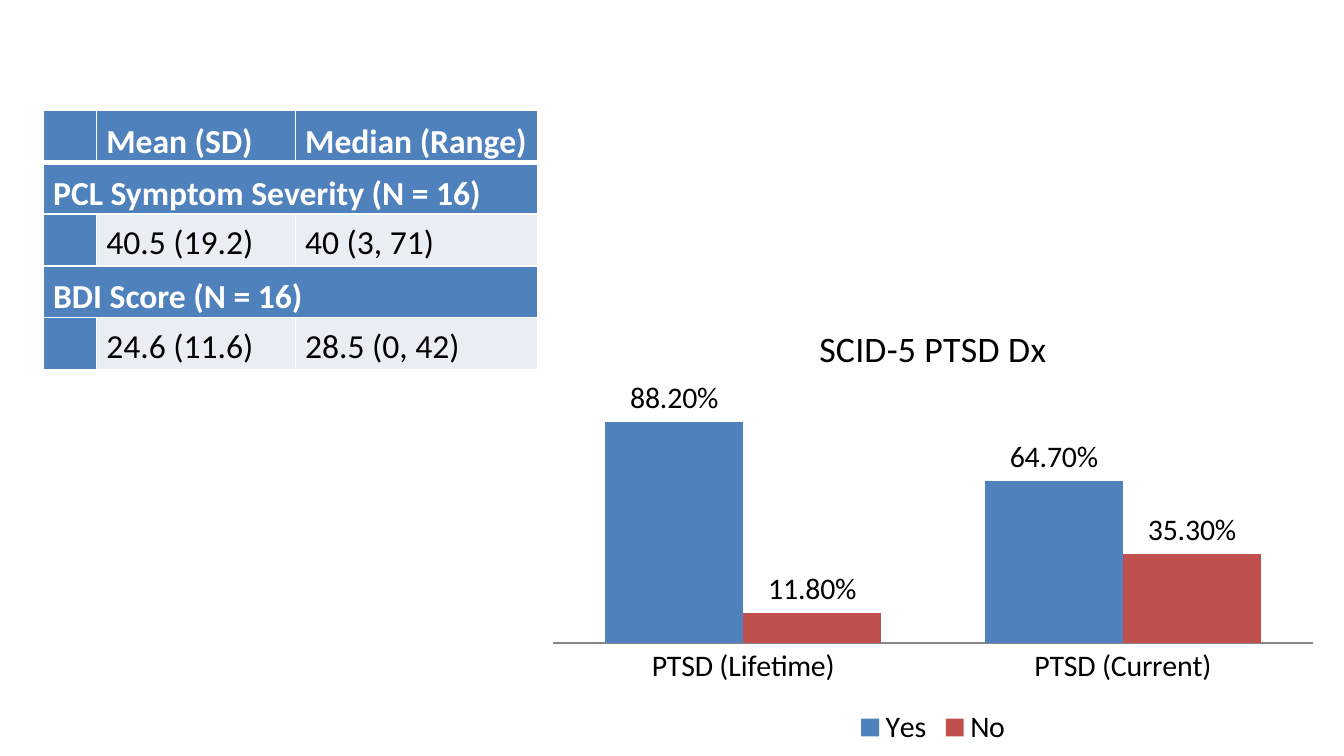
from lxml import etree
from pptx import Presentation
from pptx import util as u
from pptx.chart import data
from pptx.dml import color
from pptx.enum import chart as charts, text
from pptx.oxml import ns

SCALE = 9525
BLUE, RED, PALE = "4F81BD", "C0504D", "E9EDF4"
WHITE, BLACK, GREY = "FFFFFF", "000000", "868686"


def px(length):
    return u.Emu(length * SCALE)


def rgb(value):
    return color.RGBColor.from_string(value)


def style_font(font, size, shade, bold=False):
    font.name, font.size, font.bold = "Calibri", u.Pt(size), bold
    font.color.rgb = rgb(shade)


def write(frame, words, size=18, shade=BLACK, bold=False, spacing=None):
    paragraph = frame.paragraphs[0]
    paragraph.line_spacing = spacing
    run = paragraph.add_run()
    run.text = words
    style_font(run.font, size, shade, bold)


def fill(target, shade):
    target.fill.solid()
    target.fill.fore_color.rgb = rgb(shade)


def draw_borders(cell, widths):
    properties = cell._tc.get_or_add_tcPr()
    for side in "LRTB":
        line = etree.SubElement(properties, ns.qn(f"a:ln{side}"), w=str(u.Pt(widths.get(side, 1))))
        solid = etree.SubElement(line, ns.qn("a:solidFill"))
        etree.SubElement(solid, ns.qn("a:srgbClr"), val=WHITE)


class ClinicalSlide:
    """Holds the style and the current slide, and adds tables and charts to it."""

    def __init__(self, presentation):
        self.slide = presentation.slides.add_slide(presentation.slide_layouts[6])
        self.label_size = 16
        self.heading_rule = 3

    def add_table(self, left, top, widths, row_height, rows):
        shape = self.slide.shapes.add_table(
            len(rows), len(widths), px(left), px(top), px(sum(widths)), px(row_height * len(rows)))
        table = shape.table
        for column, width in zip(table.columns, widths):
            column.width = px(width)
        for index, values in enumerate(rows):
            table.rows[index].height = px(row_height)
            section = len(values) == 1
            if section:
                table.cell(index, 0).merge(table.cell(index, len(widths) - 1))
            rules = {0: {"B": self.heading_rule}, 1: {"T": self.heading_rule}}.get(index, {})
            for position, words in enumerate(values):
                heading = index == 0 or section
                self.fill_cell(table.cell(index, position), words, heading, position == 0, rules)

    def fill_cell(self, cell, words, heading, first, rules):
        cell.margin_left = cell.margin_right = px(7)
        cell.margin_top = cell.margin_bottom = 0
        cell.vertical_anchor = text.MSO_ANCHOR.BOTTOM if heading else text.MSO_ANCHOR.MIDDLE
        draw_borders(cell, rules)
        fill(cell, BLUE if heading or first else PALE)
        if words:
            write(cell.text_frame, words, shade=WHITE if heading else BLACK, bold=heading, spacing=1.15)

    def add_column_chart(self, left, top, width, height, title, categories, series):
        chart_data = data.CategoryChartData(number_format="0.00%")
        chart_data.categories = categories
        for name, values, _ in series:
            chart_data.add_series(name, values)
        chart = self.slide.shapes.add_chart(
            charts.XL_CHART_TYPE.COLUMN_CLUSTERED, px(left), px(top), px(width), px(height), chart_data).chart
        style_font(chart.font, self.label_size, BLACK)
        chart.chart_title.text_frame.text = title
        for overlay in chart.element.xpath("c:chart/c:title/c:overlay"):
            overlay.set("val", "1")
        chart.has_legend = True
        chart.legend.position = charts.XL_LEGEND_POSITION.BOTTOM
        chart.legend.include_in_layout = False
        self.style_axes(chart)
        plot = chart.plots[0]
        plot.gap_width, plot.overlap, plot.vary_by_categories = 75, 0, False
        for bars, (_, _, shade) in zip(plot.series, series):
            fill(bars.format, shade)
            labels = bars.data_labels
            labels.show_value = True
            labels.number_format, labels.number_format_is_linked = "0.00%", False
            labels.position = charts.XL_LABEL_POSITION.OUTSIDE_END

    def style_axes(self, chart):
        values, categories = chart.value_axis, chart.category_axis
        values.visible = values.has_major_gridlines = False
        values.minimum_scale, values.maximum_scale = 0, 1
        categories.major_tick_mark = charts.XL_TICK_MARK.NONE
        categories.format.line.color.rgb = rgb(GREY)


def main():
    presentation = Presentation()
    presentation.slide_width, presentation.slide_height = px(960), px(540)
    slide = ClinicalSlide(presentation)
    slide.add_column_chart(
        384, 215, 565, 322, "SCID-5 PTSD Dx", ["PTSD (Lifetime)", "PTSD (Current)"],
        [("Yes", [0.882, 0.647], BLUE), ("No", [0.118, 0.353], RED)])
    slide.add_table(31, 79, [38, 142, 173], 37, [
        ["", "Mean (SD)", "Median (Range)"],
        ["PCL Symptom Severity (N = 16)"],
        ["", "40.5 (19.2)", "40 (3, 71)"],
        ["BDI Score (N = 16)"],
        ["", "24.6 (11.6)", "28.5 (0, 42)"],
    ])
    presentation.save("out.pptx")


if __name__ == "__main__":
    main()
